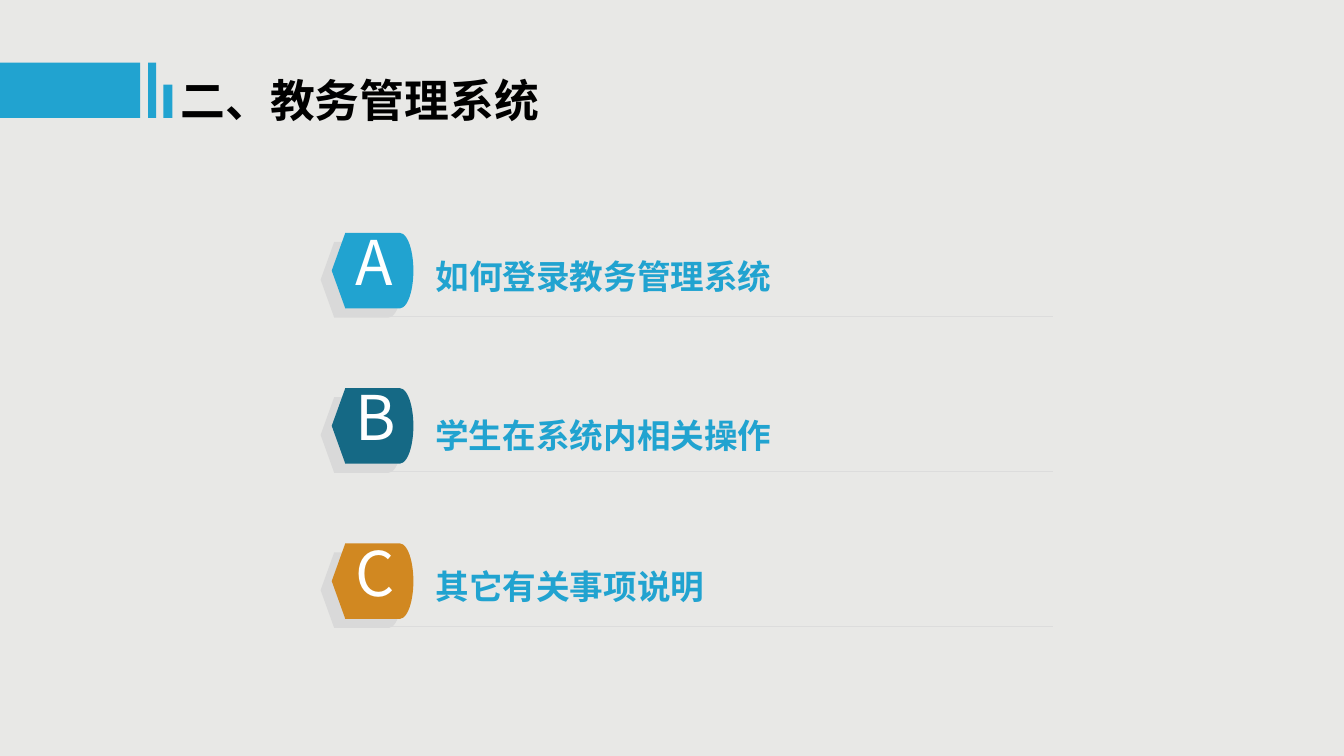
from dataclasses import dataclass

from lxml import etree
from pptx import Presentation
from pptx.dml.color import RGBColor
from pptx.enum.shapes import MSO_CONNECTOR, MSO_SHAPE
from pptx.enum.text import MSO_ANCHOR, MSO_AUTO_SIZE, PP_ALIGN
from pptx.oxml.ns import qn
from pptx.util import Inches, Pt

RECTANGLE = MSO_SHAPE.RECTANGLE
DISPLAY = MSO_SHAPE.FLOWCHART_DISPLAY
STRAIGHT = MSO_CONNECTOR.STRAIGHT
TOP, MIDDLE = MSO_ANCHOR.TOP, MSO_ANCHOR.MIDDLE
CENTER, JUSTIFY = PP_ALIGN.CENTER, PP_ALIGN.JUSTIFY
FIT_SHAPE = MSO_AUTO_SIZE.SHAPE_TO_FIT_TEXT
TITLE_ONLY = 5


@dataclass(frozen=True)
class Theme:
    background: str = "E8E8E6"
    blue: str = "21A3D0"
    teal: str = "156985"
    orange: str = "D18821"
    shade: str = "D9D9D9"
    rule: str = "DCDCDC"
    black: str = "000000"
    white: str = "FFFFFF"
    text_font: str = "Noto Sans CJK SC"
    letter_font: str = "Noto Sans CJK JP"
    title_size: int = 32
    letter_size: int = 44
    item_size: int = 24


class SlideBuilder:
    def __init__(self, slide, theme):
        self.slide = slide
        self.theme = theme
        fill = slide.background.fill
        fill.solid()
        fill.fore_color.rgb = RGBColor.from_string(theme.background)

    def set_text(self, box, text, size, color, font_name, align, bold=False):
        para = box.text_frame.paragraphs[0]
        para.add_run().text = text
        para.alignment = align
        font = para.font
        font.size, font.bold, font.name = Pt(size), bold, font_name
        font.color.rgb = RGBColor.from_string(color)
        # East Asian typeface
        defaults = para._p.get_or_add_pPr().find(qn("a:defRPr"))
        etree.SubElement(defaults, qn("a:ea")).set("typeface", font_name)
        return para

    def title(self, text, left, top, width, height):
        box = self.slide.shapes.title
        box.left, box.top = Inches(left), Inches(top)
        box.width, box.height = Inches(width), Inches(height)
        frame = box.text_frame
        frame.word_wrap = True
        frame.auto_size = FIT_SHAPE
        frame.vertical_anchor = MIDDLE
        self.set_text(box, text, self.theme.title_size, self.theme.black,
                      self.theme.text_font, JUSTIFY, bold=True)

    def shape(self, kind, left, top, width, height, color):
        shape = self.slide.shapes.add_shape(
            kind, Inches(left), Inches(top), Inches(width), Inches(height))
        shape.shadow.inherit = False
        shape.fill.solid()
        shape.fill.fore_color.rgb = RGBColor.from_string(color)
        shape.line.fill.background()
        return shape

    def badge(self, letter, left, top, width, height, color):
        badge = self.shape(DISPLAY, left, top, width, height, color)
        frame = badge.text_frame
        frame.vertical_anchor = MIDDLE
        frame.margin_bottom = Inches(0.24)
        self.set_text(badge, letter, self.theme.letter_size, self.theme.white,
                      self.theme.letter_font, CENTER)

    def rule(self, left, right, top):
        line = self.slide.shapes.add_connector(
            STRAIGHT, Inches(left), Inches(top), Inches(right), Inches(top))
        line.line.color.rgb = RGBColor.from_string(self.theme.rule)
        line.line.width = Pt(0.75)
        etree.SubElement(line._element.spPr, qn("a:effectLst"))

    def item(self, text, left, top, width, height):
        box = self.slide.shapes.add_textbox(
            Inches(left), Inches(top), Inches(width), Inches(height))
        frame = box.text_frame
        frame.word_wrap = True
        frame.auto_size = FIT_SHAPE
        frame.vertical_anchor = TOP
        para = self.set_text(box, text, self.theme.item_size, self.theme.blue,
                             self.theme.text_font, JUSTIFY, bold=True)
        para.line_spacing = 1.2
        para.space_before = Pt(6)


def main():
    deck = Presentation()
    deck.slide_width, deck.slide_height = Inches(13.33), Inches(7.5)
    theme = Theme()
    page = SlideBuilder(
        deck.slides.add_slide(deck.slide_layouts[TITLE_ONLY]), theme)

    # Title with its bars, all standing on one base line
    bar_base = 1.17
    for left, width, height in ((0, 1.39, 0.55), (1.47, 0.08, 0.55),
                                (1.62, 0.09, 0.33)):
        page.shape(RECTANGLE, left, bar_base - height, width, height,
                   theme.blue)
    page.title("二、教务管理系统", 1.69, 0.67, 4.17, 0.64)

    # Agenda rows: letter, badge colour, text, text top, text width
    rows = (
        ("A", theme.blue, "如何登录教务管理系统", 2.41, 4.49),
        ("B", theme.teal, "学生在系统内相关操作", 3.99, 4.73),
        ("C", theme.orange, "其它有关事项说明", 5.48, 4.61),
    )
    first_top, pitch = 2.31, 1.54
    badge_width, badge_height = 0.81, 0.75
    for index, (letter, color, text, text_top, text_width) in enumerate(rows):
        top = first_top + index * pitch
        page.rule(3.31, 10.44, top + 0.83)
        page.shape(DISPLAY, 3.18, top + 0.09, badge_width, badge_height,
                   theme.shade)
        page.badge(letter, 3.29, top, badge_width, badge_height, color)
        page.item(text, 4.22, text_top, text_width, 0.58)

    deck.save("out.pptx")


if __name__ == "__main__":
    main()
